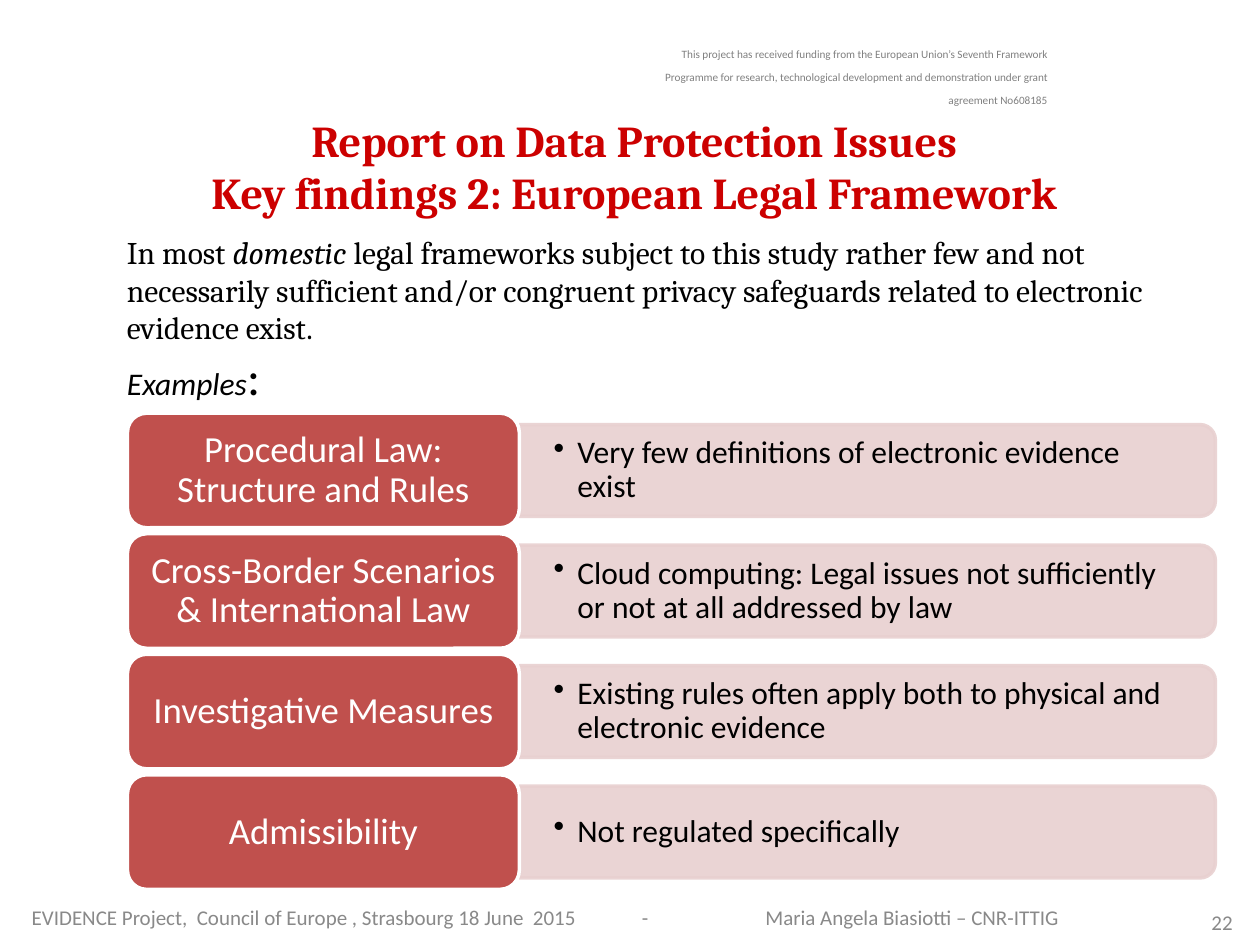
from dataclasses import dataclass

from lxml import etree
from pptx import Presentation
from pptx import util as u
from pptx.dml.color import RGBColor
from pptx.enum import shapes, text
from pptx.oxml.ns import qn


@dataclass(frozen=True)
class Theme:
    heading_font: str = "Cambria"
    body_font: str = "Calibri"
    title: str = "CC0000"
    label: str = "C0504D"
    panel: str = "E8D0D0"
    black: str = "000000"
    white: str = "FFFFFF"
    funding: str = "808080"
    footer: str = "898989"
    funding_size: float = 11
    title_size: float = 25.2
    body_size: float = 18
    colon_size: float = 28
    label_size: float = 21
    footer_size: float = 12


THEME = Theme()
ALIGN = text.PP_ALIGN
MIDDLE = text.MSO_ANCHOR.MIDDLE

ROWS = [
    ("Procedural Law: Structure and Rules",
     "Very few definitions of electronic evidence exist"),
    ("Cross-Border Scenarios & International Law",
     "Cloud computing: Legal issues not sufficiently or not at all addressed by law"),
    ("Investigative Measures",
     "Existing rules often apply both to physical and electronic evidence"),
    ("Admissibility", "Not regulated specifically"),
]


def apply(target, values):
    for name, value in values.items():
        setattr(target, name, value)


def font(size, color, name=THEME.body_font, **extra):
    return {"size": u.Pt(size), "name": name, "color": color, **extra}


def add_run(paragraph, words, values):
    run = paragraph.add_run()
    run.text = words
    values = dict(values)
    run.font.color.rgb = RGBColor.from_string(values.pop("color"))
    apply(run.font, values)
    return run


def setup_frame(shape, insets=None, **values):
    frame = shape.text_frame
    apply(frame, {"word_wrap": True, **values})
    if insets:
        sides = ("margin_left", "margin_top", "margin_right", "margin_bottom")
        apply(frame, {side: u.Cm(inset) for side, inset in zip(sides, insets)})
    return frame.paragraphs[0]


def add_text(slide, box, lines, values, insets=None, align=ALIGN.LEFT, **frame_values):
    shape = slide.shapes.add_textbox(*map(u.Cm, box))
    paragraph = setup_frame(shape, insets, **frame_values)
    paragraph.alignment = align
    for index, line in enumerate(lines):
        if index:
            paragraph.add_line_break()
        add_run(paragraph, line, values)
    return paragraph


def add_block(slide, kind, box, fill, line, opacity=None):
    shape = slide.shapes.add_shape(kind, *map(u.Cm, box))
    shape.shadow.inherit = False
    shape.fill.solid()
    shape.fill.fore_color.rgb = RGBColor.from_string(fill)
    shape.line.color.rgb = RGBColor.from_string(line)
    shape.line.width = u.Pt(2)
    if opacity:
        for color in shape._element.spPr.iter(qn("a:srgbClr")):
            etree.SubElement(color, qn("a:alpha"), val=str(opacity * 1000))
    return shape


def add_bullet(paragraph, indent):
    properties = paragraph._p.get_or_add_pPr()
    properties.set("marL", str(u.Cm(indent)))
    properties.set("indent", str(-u.Cm(indent)))
    etree.SubElement(properties, qn("a:buChar"), char="•")


def add_tab(paragraph, position):
    tabs = etree.SubElement(paragraph._p.get_or_add_pPr(), qn("a:tabLst"))
    etree.SubElement(tabs, qn("a:tab"), pos=str(u.Cm(position)), algn="l")


def add_row(slide, top, label, finding):
    label_left, label_width, label_height = 2.57, 7.9, 2.31
    panel_left, panel_width, panel_height = 10.47, 14.03, 1.85
    center_x = panel_left + panel_width / 2
    center_y = top + label_height / 2

    panel = add_block(
        slide, shapes.MSO_SHAPE.ROUND_2_SAME_RECTANGLE,
        (center_x - panel_height / 2, center_y - panel_width / 2,
         panel_height, panel_width),
        THEME.panel, THEME.panel, opacity=90)
    panel.rotation = 90

    paragraph = add_text(
        slide, (panel_left, center_y - 0.84, 13.94, 1.68), [finding],
        font(THEME.body_size, THEME.black),
        insets=(0.69, 0.36, 0.69, 0.36), vertical_anchor=MIDDLE)
    paragraph.line_spacing = 0.9
    add_bullet(paragraph, 0.48)

    block = add_block(
        slide, shapes.MSO_SHAPE.ROUNDED_RECTANGLE,
        (label_left, top, label_width, label_height), THEME.label, THEME.white)
    paragraph = setup_frame(block, (0.35, 0.22, 0.35, 0.22), vertical_anchor=MIDDLE)
    apply(paragraph, {"alignment": ALIGN.CENTER, "line_spacing": 0.9})
    add_run(paragraph, label, font(THEME.label_size, THEME.white))


def add_header(slide):
    funding = add_text(
        slide, (12.7, 0.91, 8.41, 1.19),
        ["This project has received funding from the European Union’s Seventh "
         "Framework Programme for research, technological development and "
         "demonstration under grant agreement No608185"],
        font(THEME.funding_size, THEME.funding),
        insets=(0, 0, 0, 0), align=ALIGN.RIGHT)
    funding.runs[0].font._element.set("baseline", "30000")
    add_text(
        slide, (1.09, 2.34, 23.39, 2.01),
        ["Report on Data Protection Issues",
         "Key findings 2: European Legal Framework"],
        font(THEME.title_size, THEME.title, THEME.heading_font, bold=True),
        align=ALIGN.CENTER, vertical_anchor=MIDDLE)


def add_introduction(slide):
    body = font(THEME.body_size, THEME.black, THEME.heading_font)
    paragraph = add_text(slide, (2.31, 4.57, 22, 3.76), ["In most "], body)
    add_run(paragraph, "domestic", {**body, "italic": True})
    add_run(paragraph,
            " legal frameworks subject to this study rather few and not "
            "necessarily sufficient and/or congruent privacy safeguards "
            "related to electronic evidence exist.", body)
    paragraph.add_line_break()
    add_run(paragraph, "Examples", font(THEME.body_size, THEME.black, italic=True))
    add_run(paragraph, ":", font(THEME.colon_size, THEME.black))


def add_footer(slide):
    values = font(THEME.footer_size, THEME.footer)
    event = add_text(
        slide, (0.39, 17.93, 13.91, 1.12),
        ["EVIDENCE Project,  Council of Europe , Strasbourg 18 June  2015\t-"],
        values, vertical_anchor=MIDDLE)
    add_tab(event, 12.3)
    add_text(slide, (15.18, 17.93, 8.52, 1.12),
             ["Maria Angela Biasiotti – CNR-ITTIG"], values, vertical_anchor=MIDDLE)
    add_text(slide, (23.7, 18.03, 1.4, 1.12), ["22"], values,
             align=ALIGN.RIGHT, vertical_anchor=MIDDLE)


def main():
    presentation = Presentation()
    apply(presentation, {"slide_width": u.Cm(25.4), "slide_height": u.Cm(19.05)})
    slide = presentation.slides.add_slide(presentation.slide_layouts[6])
    add_header(slide)
    add_footer(slide)
    for index, (label, finding) in enumerate(ROWS):
        add_row(slide, 8.33 + index * 2.43, label, finding)
    add_introduction(slide)
    presentation.save("out.pptx")


if __name__ == "__main__":
    main()
